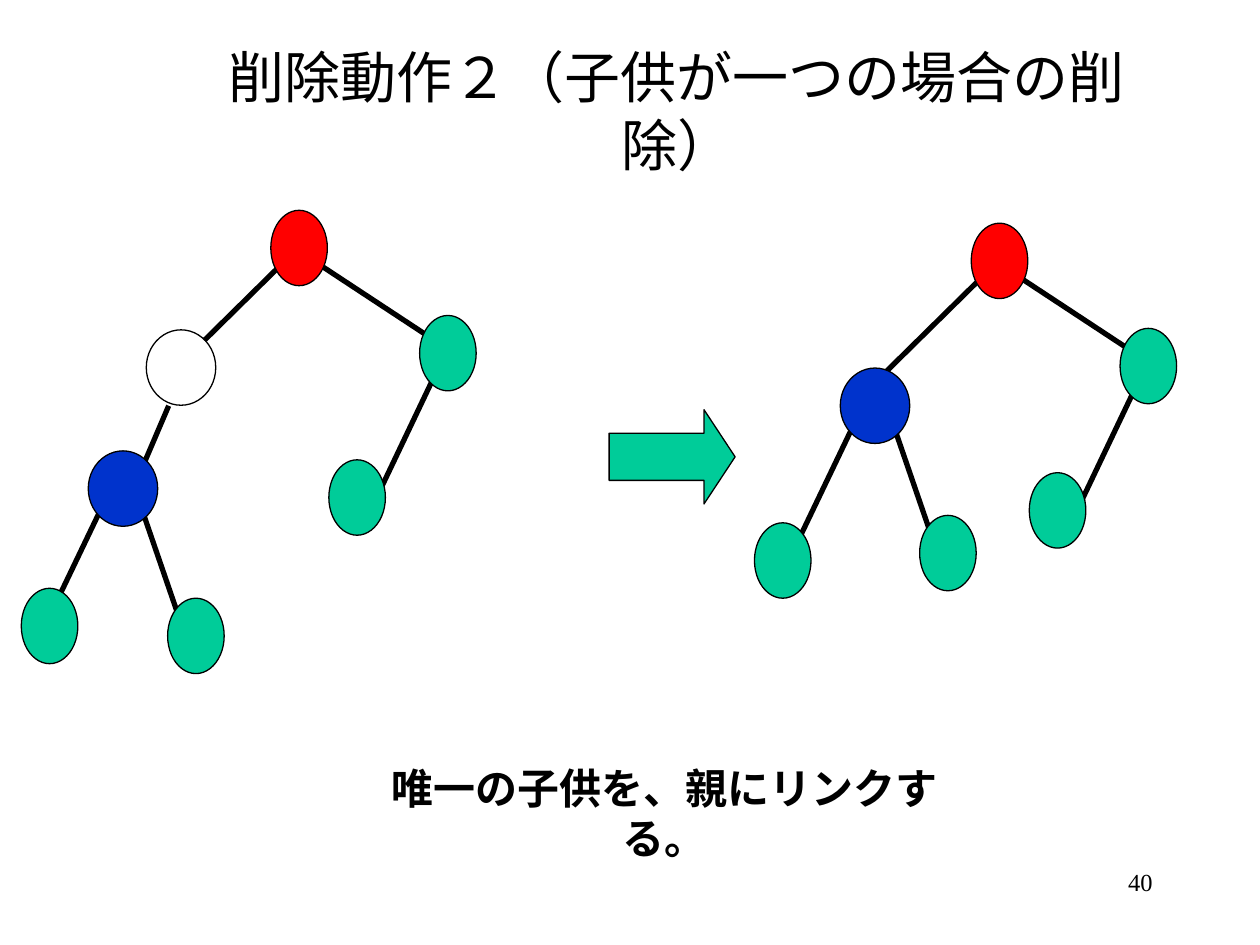
from pptx import Presentation
from pptx.dml.color import RGBColor
from pptx.enum.shapes import MSO_CONNECTOR, MSO_SHAPE
from pptx.enum.text import MSO_ANCHOR, MSO_AUTO_SIZE, PP_ALIGN
from pptx.oxml.ns import qn
from pptx.util import Cm, Pt
from lxml.etree import SubElement

COLOURS = {
    "black": "000000",
    "white": "FFFFFF",
    "red": "FF0000",
    "green": "00CC99",
    "blue": "0033CC",
}
FONT = "Times New Roman"
NODE_HEIGHT = 1.52
SMALL_NODE = 1.14
LARGE_NODE = 1.4


def colour(name):
    """Return the palette colour with this name."""
    return RGBColor.from_string(COLOURS[name])


def place(shape, left, top, width, height):
    """Move and size a shape in centimetres."""
    shape.left, shape.top = Cm(left), Cm(top)
    shape.width, shape.height = Cm(width), Cm(height)


def write(shape, text, size, alignment, bold=False):
    """Fill a shape with one formatted paragraph."""
    text_frame = shape.text_frame
    text_frame.text = text
    text_frame.word_wrap = True
    text_frame.auto_size = MSO_AUTO_SIZE.NONE
    paragraph = text_frame.paragraphs[0]
    paragraph.alignment = alignment
    font = paragraph.runs[0].font
    font.name, font.size, font.bold = FONT, Pt(size), bold
    font.color.rgb = colour("black")


def add_title(slide, text, left, top, width, height):
    """Place the slide title in its placeholder."""
    title = slide.shapes.title
    place(title, left, top, width, height)
    write(title, text, 32, PP_ALIGN.CENTER)
    title.text_frame.vertical_anchor = MSO_ANCHOR.MIDDLE


def add_label(slide, text, left, top, width, height, size, alignment, bold=False):
    """Add a text box."""
    box = slide.shapes.add_textbox(Cm(left), Cm(top), Cm(width), Cm(height))
    write(box, text, size, alignment, bold)


def add_filled(slide, preset, fill, left, top, width, height):
    """Add a filled preset shape with a thin black outline."""
    shape = slide.shapes.add_shape(preset, Cm(left), Cm(top), Cm(width), Cm(height))
    shape.shadow.inherit = False
    shape.fill.solid()
    shape.fill.fore_color.rgb = colour(fill)
    shape.line.color.rgb = colour("black")
    shape.line.width = Pt(0.75)
    return shape


def add_node(slide, fill, left, top, width=SMALL_NODE):
    """Add one tree node."""
    add_filled(slide, MSO_SHAPE.OVAL, fill, left, top, width, NODE_HEIGHT)


def add_edge(slide, left, top, start, end):
    """Add a tree edge between two points relative to a corner."""
    edge = slide.shapes.add_connector(
        MSO_CONNECTOR.STRAIGHT,
        Cm(left + start[0]), Cm(top + start[1]),
        Cm(left + end[0]), Cm(top + end[1]),
    )
    edge.line.color.rgb = colour("black")
    edge.line.width = Pt(3)
    SubElement(edge._element.spPr, qn("a:effectLst"))


def add_root_part(slide, left, top):
    """Draw the root, its right branch and the edge to its left child."""
    add_edge(slide, left, top, (1.85, 6.38), (3.45, 3.02))
    add_edge(slide, left, top, (3.45, 2.72), (0.7, 0.91))
    add_edge(slide, left, top, (-2.06, 3.33), (0.7, 0.61))
    add_node(slide, "red", left, top)
    add_node(slide, "green", left + 3, top + 2.12)
    add_node(slide, "green", left + 1.17, top + 5.03)


def add_only_child(slide, left, top, left_leaf):
    """Draw the blue child with its two leaves."""
    add_edge(slide, left, top, (2.06, 4.03), (0.97, 0.86))
    add_edge(slide, left, top, (-1.09, 3.98), (0.51, 0.64))
    add_node(slide, "blue", left, top, LARGE_NODE)
    for x, y in (left_leaf, (1.6, 2.97)):
        add_node(slide, "green", left + x, top + y)


def add_tree_before(slide, left, top):
    """Draw the tree with the white node still to be deleted."""
    add_root_part(slide, left + 5.03, top)
    add_node(slide, "white", left + 2.52, top + 2.41, LARGE_NODE)
    add_edge(slide, left, top, (2.06, 6.07), (2.97, 3.94))
    add_only_child(slide, left + 1.35, top + 4.85, (-1.35, 2.77))


def add_tree_after(slide, left, top):
    """Draw the tree with the only child linked to the root."""
    add_root_part(slide, left + 4.37, top)
    add_only_child(slide, left + 1.73, top + 2.92, (-1.73, 3.12))


def add_arrow(slide, left, top, width, height):
    """Draw the block arrow between the trees."""
    arrow = add_filled(slide, MSO_SHAPE.RIGHT_ARROW, "green", left, top, width, height)
    arrow.adjustments[0] = 0.5
    arrow.adjustments[1] = 0.33


def main():
    """Build and save the slide."""
    presentation = Presentation()
    presentation.slide_width, presentation.slide_height = Cm(25.4), Cm(19.05)
    slide = presentation.slides.add_slide(presentation.slide_layouts[5])
    add_title(slide, "削除動作２（子供が一つの場合の削除）", 4.02, 1.48, 19.26, 1.48)
    add_tree_before(slide, 0.43, 4.24)
    add_arrow(slide, 12.28, 8.26, 2.54, 1.9)
    add_tree_after(slide, 15.21, 4.5)
    add_label(slide, "唯一の子供を、親にリンクする。", 7.45, 15.24, 11.88, 1.27,
              24, PP_ALIGN.CENTER, bold=True)
    add_label(slide, "40", 18.2, 17.36, 5.29, 1.27, 14, PP_ALIGN.RIGHT)
    presentation.save("out.pptx")


if __name__ == "__main__":
    main()
